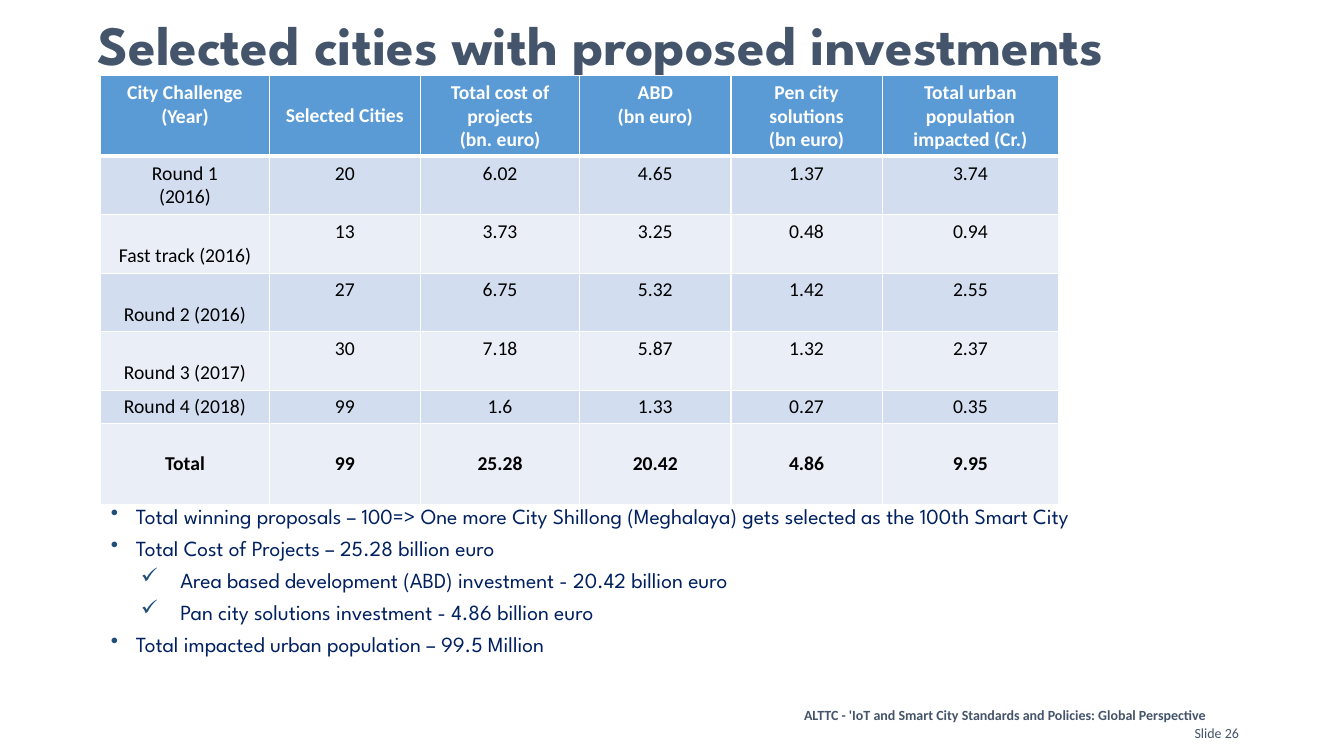
from dataclasses import dataclass

from lxml import etree
from pptx import Presentation
from pptx.dml.color import RGBColor
from pptx.enum.text import MSO_ANCHOR, PP_ALIGN
from pptx.oxml.ns import qn
from pptx.util import Inches, Pt

LEFT, CENTER = PP_ALIGN.LEFT, PP_ALIGN.CENTER
TOP, MIDDLE, BOTTOM = MSO_ANCHOR.TOP, MSO_ANCHOR.MIDDLE, MSO_ANCHOR.BOTTOM


@dataclass(frozen=True)
class Theme:
    """Colours, fonts and type sizes of the slide."""
    slate: str = "44546A"
    navy: str = "002060"
    bullet: str = "1F4E79"
    black: str = "000000"
    white: str = "FFFFFF"
    header: str = "5B9BD5"
    bands: tuple = ("D2DEEF", "EAEFF7")
    heading_font: str = "League Spartan"
    table_font: str = "Calibri"
    title_size: float = 39.6
    body_size: float = 15.4
    table_size: float = 14
    footer_size: float = 10


THEME = Theme()

HEADINGS = ["City Challenge (Year)", "Selected Cities", "Total cost of projects\n(bn. euro)",
            "ABD\n(bn euro)", "Pen city solutions\n(bn euro)",
            "Total urban population impacted (Cr.)"]
ROUNDS = [
    ["Round 1\n(2016)", "20", "6.02", "4.65", "1.37", "3.74"],
    ["Fast track (2016)", "13", "3.73", "3.25", "0.48", "0.94"],
    ["Round 2 (2016)", "27", "6.75", "5.32", "1.42", "2.55"],
    ["Round 3 (2017)", "30", "7.18", "5.87", "1.32", "2.37"],
    ["Round 4 (2018)", "99", "1.6", "1.33", "0.27", "0.35"],
    ["Total", "99", "25.28", "20.42", "4.86", "9.95"],
]
COLUMN_WIDTHS = [1.67, 1.5, 1.58, 1.5, 1.5, 1.75]
ROW_HEIGHTS = [0.8, 0.58, 0.58, 0.58, 0.58, 0.33, 0.8]
FINDINGS = [
    (0, "Total winning proposals – 100=> One more City Shillong (Meghalaya) "
        "gets selected as the 100th Smart City"),
    (0, "Total Cost of Projects – 25.28 billion euro"),
    (1, "Area based development (ABD) investment - 20.42 billion euro"),
    (1, "Pan city solutions investment - 4.86 billion euro"),
    (0, "Total impacted urban population – 99.5 Million"),
]
BULLET_LEVELS = [("•", 0.25, -0.25), ("✓", 0.69, -0.39)]


def write_text(paragraph, text, *, font, size, color, bold=False, align=LEFT, spacing=None):
    """Write one formatted span into a paragraph."""
    paragraph.alignment = align
    if spacing:
        paragraph.line_spacing = spacing
    span = paragraph.add_run()
    span.text = text
    span.font.name = font
    span.font.size = Pt(size)
    span.font.bold = bold
    span.font.color.rgb = RGBColor.from_string(color)


def add_box(page, box, anchor=TOP, wrap=True):
    """Add an empty text box and return its text frame."""
    frame = page.shapes.add_textbox(*map(Inches, box)).text_frame
    frame.word_wrap = wrap
    frame.vertical_anchor = anchor
    return frame


def add_color(parent, color):
    """Append a solid colour to an XML element."""
    etree.SubElement(parent, qn("a:srgbClr"), val=color)


def set_bullet(paragraph, level):
    """Give a paragraph the bullet and hanging indent of its level."""
    mark, margin, indent = BULLET_LEVELS[level]
    properties = paragraph._p.get_or_add_pPr()
    properties.set("marL", str(Inches(margin)))
    properties.set("indent", str(Inches(indent)))
    add_color(etree.SubElement(properties, qn("a:buClr")), THEME.bullet)
    etree.SubElement(properties, qn("a:buChar"), char=mark)


def set_borders(cell, bottom, top):
    """Draw white borders round a cell, with widths in points."""
    properties = cell._tc.get_or_add_tcPr()
    for side, width in (("L", 1), ("R", 1), ("T", top), ("B", bottom)):
        line = etree.SubElement(properties, qn(f"a:ln{side}"), w=str(Pt(width)))
        add_color(etree.SubElement(line, qn("a:solidFill")), THEME.white)


def cell_anchor(row, column):
    """Return the vertical anchor of a table cell."""
    if row == len(ROUNDS) or (row, column) == (0, 1):
        return MIDDLE
    if column == 0 and row in (2, 3, 4):
        return BOTTOM
    return TOP


def add_title(page, box):
    """Place the slide title."""
    frame = add_box(page, box, MIDDLE)
    write_text(frame.paragraphs[0], "Selected cities with proposed investments",
               font=THEME.heading_font, size=THEME.title_size, color=THEME.slate,
               bold=True, spacing=0.9)


def add_investments(page, left, top):
    """Place the table of investments per challenge round."""
    table = page.shapes.add_table(
        len(ROW_HEIGHTS), len(COLUMN_WIDTHS), Inches(left), Inches(top),
        Inches(sum(COLUMN_WIDTHS)), Inches(sum(ROW_HEIGHTS))).table
    for column, width in zip(table.columns, COLUMN_WIDTHS):
        column.width = Inches(width)
    for row, height in zip(table.rows, ROW_HEIGHTS):
        row.height = Inches(height)
    for row, values in enumerate([HEADINGS, *ROUNDS]):
        is_header = row == 0
        fill = THEME.header if is_header else THEME.bands[(row - 1) % 2]
        for column, value in enumerate(values):
            cell = table.cell(row, column)
            set_borders(cell, bottom=3 if is_header else 1, top=3 if row == 1 else 1)
            cell.fill.solid()
            cell.fill.fore_color.rgb = RGBColor.from_string(fill)
            cell.vertical_anchor = cell_anchor(row, column)
            frame = cell.text_frame
            for index, line in enumerate(value.split("\n")):
                paragraph = frame.add_paragraph() if index else frame.paragraphs[0]
                write_text(paragraph, line, font=THEME.table_font, size=THEME.table_size,
                           color=THEME.white if is_header else THEME.black,
                           bold=row in (0, len(ROUNDS)), align=CENTER)


def add_findings(page, box):
    """Place the bulleted findings under the table."""
    frame = add_box(page, box)
    for index, (level, text) in enumerate(FINDINGS):
        paragraph = frame.add_paragraph() if index else frame.paragraphs[0]
        set_bullet(paragraph, level)
        if index:
            paragraph.space_before = Pt(10)
        write_text(paragraph, text, font=THEME.heading_font, size=THEME.body_size,
                   color=THEME.navy, spacing=0.7)


def add_footer(page, left, top):
    """Place the course name and the slide number."""
    style = {"font": THEME.table_font, "size": THEME.footer_size, "color": THEME.slate}
    course = add_box(page, (left, top, 4.25, 0.27))
    write_text(course.paragraphs[0],
               "ALTTC - 'IoT and Smart City Standards and Policies: Global Perspective",
               bold=True, align=CENTER, **style)
    number = add_box(page, (left + 3.91, top + 0.18, 0.66, 0.27), wrap=False)
    write_text(number.paragraphs[0], "Slide 26", **style)


def main():
    """Build the slide and save it."""
    deck = Presentation()
    deck.slide_width, deck.slide_height = Inches(13.33), Inches(7.5)
    page = deck.slides.add_slide(deck.slide_layouts[6])
    add_footer(page, 7.84, 6.96)
    add_title(page, (0.87, 0.12, 11.71, 0.7))
    add_investments(page, 1, 0.75)
    add_findings(page, (1, 5.01, 10.42, 1.74))
    deck.save("out.pptx")


if __name__ == "__main__":
    main()
